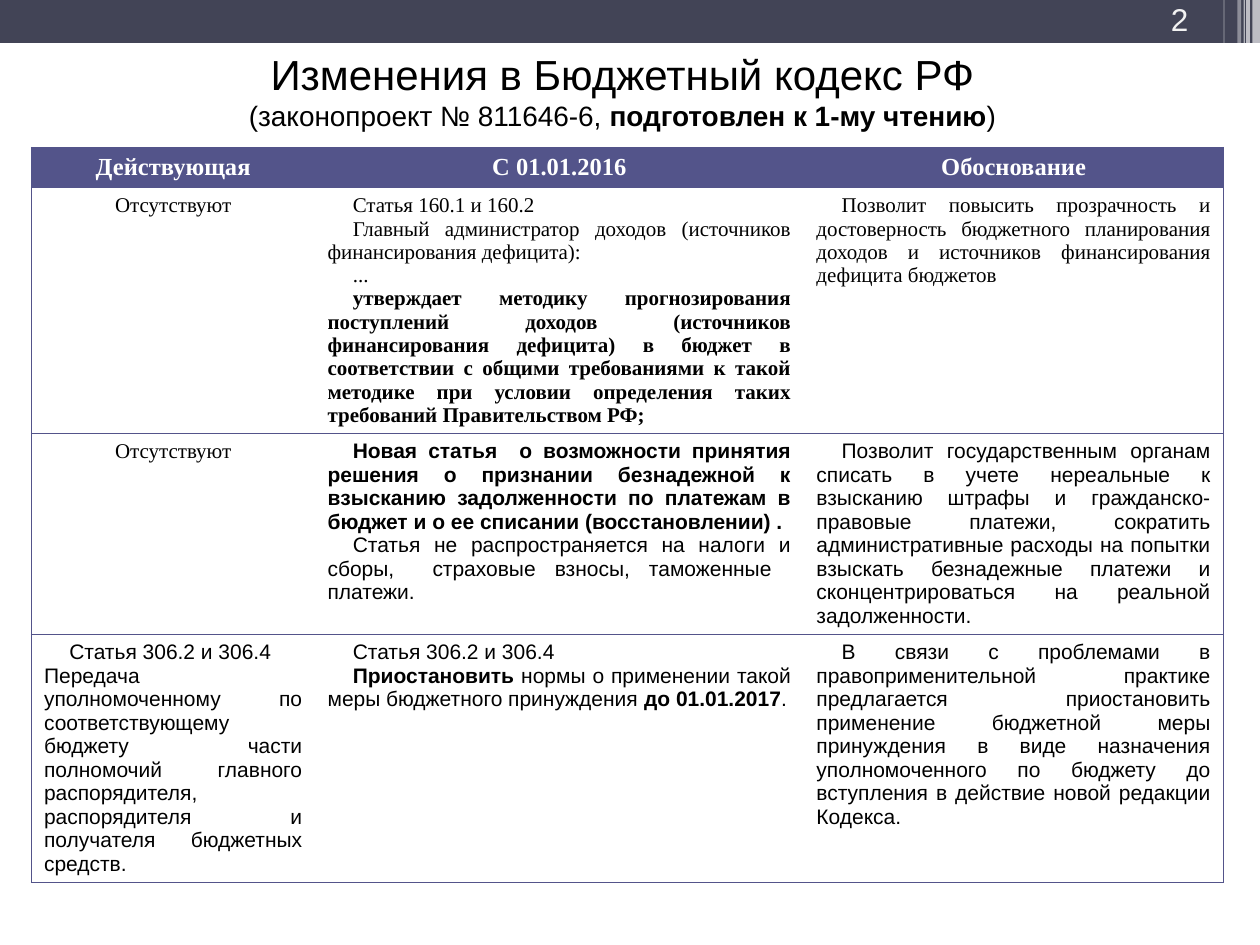
from lxml import etree
from pptx import Presentation
from pptx.dml.color import RGBColor
from pptx.enum.shapes import MSO_SHAPE
from pptx.enum.text import MSO_ANCHOR, MSO_AUTO_SIZE, PP_ALIGN
from pptx.oxml.ns import qn
from pptx.util import Inches, Pt

RECTANGLE = MSO_SHAPE.RECTANGLE
LEFT, CENTER, RIGHT, JUSTIFY = PP_ALIGN.LEFT, PP_ALIGN.CENTER, PP_ALIGN.RIGHT, PP_ALIGN.JUSTIFY
MIDDLE, BOTTOM = MSO_ANCHOR.MIDDLE, MSO_ANCHOR.BOTTOM
NO_AUTOFIT = MSO_AUTO_SIZE.NONE

SANS, SERIF = "Arial", "Times New Roman"
BLACK, WHITE, BAND, ACCENT, NUMBER = "000000", "FFFFFF", "424456", "53548A", "F2F2F2"

STRIPES = [
    (9.94, 0.06, 0.68, 65),
    (9.89, 0.03, 0.68, 65),
    (9.87, 0.01, 0.68, 60),
    (9.82, 0.03, 0.68, 40),
    (9.71, 0.01, 0.64, 30),
]

COLUMN_WIDTHS = [2.25, 3.88, 3.33]
ROW_HEIGHTS = [0.32, 1.95, 1.59, 1.97]
HEADERS = ["Действующая", "С 01.01.2016", "Обоснование"]
ABSENT = ("Отсутствуют", CENTER, 0)


def indented(*texts):
    return [(text, JUSTIFY, 0.2) for text in texts]


AMENDMENTS = [
    (SERIF, [
        [ABSENT],
        indented(
            "Статья 160.1 и 160.2",
            "Главный администратор доходов (источников финансирования дефицита):",
            "...",
            "**утверждает методику прогнозирования поступлений доходов (источников "
            "финансирования дефицита) в бюджет в соответствии с общими требованиями к такой "
            "методике при условии определения таких требований Правительством РФ;**",
        ),
        indented(
            "Позволит повысить прозрачность и достоверность бюджетного планирования доходов "
            "и источников финансирования дефицита бюджетов"
        ),
    ]),
    (SANS, [
        [ABSENT],
        indented(
            "**Новая статья  о возможности принятия решения о признании безнадежной к "
            "взысканию задолженности по платежам в бюджет и о ее списании (восстановлении) . **",
            "Статья не распространяется на налоги и сборы,  страховые взносы, таможенные  платежи.",
        ),
        indented(
            "Позволит государственным органам списать в учете нереальные к взысканию штрафы "
            "и гражданско-правовые платежи, сократить административные расходы на попытки "
            "взыскать безнадежные платежи и сконцентрироваться на реальной задолженности."
        ),
    ]),
    (SANS, [
        indented("Статья 306.2 и 306.4") + [(
            "Передача уполномоченному по соответствующему бюджету части полномочий главного "
            "распорядителя, распорядителя и получателя бюджетных средств.", JUSTIFY, 0)],
        indented(
            "Статья 306.2 и 306.4",
            "**Приостановить** нормы о применении такой меры бюджетного принуждения **до 01.01.2017**.",
        ),
        indented(
            "В связи с проблемами в правоприменительной практике предлагается приостановить "
            "применение бюджетной меры принуждения в виде назначения уполномоченного по "
            "бюджету до вступления в действие новой редакции Кодекса."
        ),
    ]),
]


def color(value):
    return RGBColor.from_string(value)


def write(paragraph, text, size=12, font=SANS, fill=BLACK, align=LEFT, indent=0):
    paragraph.alignment = align
    if indent:
        properties = paragraph._p.get_or_add_pPr()
        properties.set("marL", "0")
        properties.set("indent", str(Inches(indent)))
    for index, part in enumerate(text.split("**")):
        if part:
            run = paragraph.add_run()
            run.text = part
            run.font.size = Pt(size)
            run.font.name = font
            run.font.bold = index % 2 == 1
            run.font.color.rgb = color(fill)


def set_borders(cell, visible_sides):
    properties = cell._tc.get_or_add_tcPr()
    for side in "LRTB":
        line = etree.SubElement(properties, qn(f"a:ln{side}"), w=str(Pt(0.75)))
        if side in visible_sides:
            solid = etree.SubElement(line, qn("a:solidFill"))
            etree.SubElement(solid, qn("a:srgbClr"), val=ACCENT)
        else:
            etree.SubElement(line, qn("a:noFill"))


class SlideBuilder:
    def __init__(self, presentation):
        self.slide = presentation.slides.add_slide(presentation.slide_layouts[5])

    def bar(self, left, top, width, height, fill, opacity=100):
        shape = self.slide.shapes.add_shape(
            RECTANGLE, Inches(left), Inches(top), Inches(width), Inches(height))
        shape.shadow.inherit = False
        shape.line.fill.background()
        shape.fill.solid()
        shape.fill.fore_color.rgb = color(fill)
        if opacity < 100:
            tint = shape._element.spPr.find(qn("a:solidFill"))[0]
            etree.SubElement(tint, qn("a:alpha"), val=str(opacity * 1000))

    def title(self, left, top, width, height, heading, subtitle):
        shape = self.slide.shapes.title
        shape.left, shape.top = Inches(left), Inches(top)
        shape.width, shape.height = Inches(width), Inches(height)
        frame = shape.text_frame
        frame.auto_size = NO_AUTOFIT
        frame.vertical_anchor = MIDDLE
        paragraph = frame.paragraphs[0]
        write(paragraph, heading, size=24, align=CENTER)
        paragraph.add_line_break()
        write(paragraph, subtitle, size=16, align=CENTER)

    def text(self, left, top, width, height, text, anchor, **style):
        shape = self.slide.shapes.add_textbox(
            Inches(left), Inches(top), Inches(width), Inches(height))
        shape.text_frame.word_wrap = True
        shape.text_frame.vertical_anchor = anchor
        write(shape.text_frame.paragraphs[0], text, **style)

    def cell(self, cell, paragraphs, sides, background=None, **style):
        set_borders(cell, sides)
        if background:
            cell.fill.solid()
            cell.fill.fore_color.rgb = color(background)
        else:
            cell.fill.background()
        frame = cell.text_frame
        for index, (text, align, indent) in enumerate(paragraphs):
            paragraph = frame.add_paragraph() if index else frame.paragraphs[0]
            write(paragraph, text, align=align, indent=indent, **style)

    def table(self, left, top, headers, body):
        table = self.slide.shapes.add_table(
            len(ROW_HEIGHTS), len(COLUMN_WIDTHS), Inches(left), Inches(top),
            Inches(sum(COLUMN_WIDTHS)), Inches(sum(ROW_HEIGHTS))).table
        table.horz_banding = False
        for column, width in zip(table.columns, COLUMN_WIDTHS):
            column.width = Inches(width)
        for row, height in zip(table.rows, ROW_HEIGHTS):
            row.height = Inches(height)
        sides = ["LTB", "TB", "RTB"]
        for column, header in enumerate(headers):
            self.cell(table.cell(0, column), [(f"**{header}**", CENTER, 0)], sides[column],
                      background=ACCENT, size=14, font=SERIF, fill=WHITE)
        for row, (font, cells) in enumerate(body, 1):
            for column, paragraphs in enumerate(cells):
                cell_font = SERIF if paragraphs == [ABSENT] else font
                self.cell(table.cell(row, column), paragraphs, sides[column], font=cell_font)


def main():
    presentation = Presentation()
    presentation.slide_width, presentation.slide_height = Inches(10), Inches(7.5)
    builder = SlideBuilder(presentation)
    builder.bar(0, 0, 10, 0.34, BAND)
    for left, width, height, opacity in STRIPES:
        builder.bar(left, 0, width, height, WHITE, opacity)
    builder.title(0.44, 0.44, 9, 0.55, "Изменения в Бюджетный кодекс РФ",
                  "(законопроект № 811646-6, **подготовлен к 1-му чтению**)")
    builder.table(0.25, 1.17, HEADERS, AMENDMENTS)
    builder.text(8.74, 0.02, 0.79, 0.33, "2", BOTTOM, size=18, fill=NUMBER, align=RIGHT)
    presentation.save("out.pptx")


if __name__ == "__main__":
    main()
